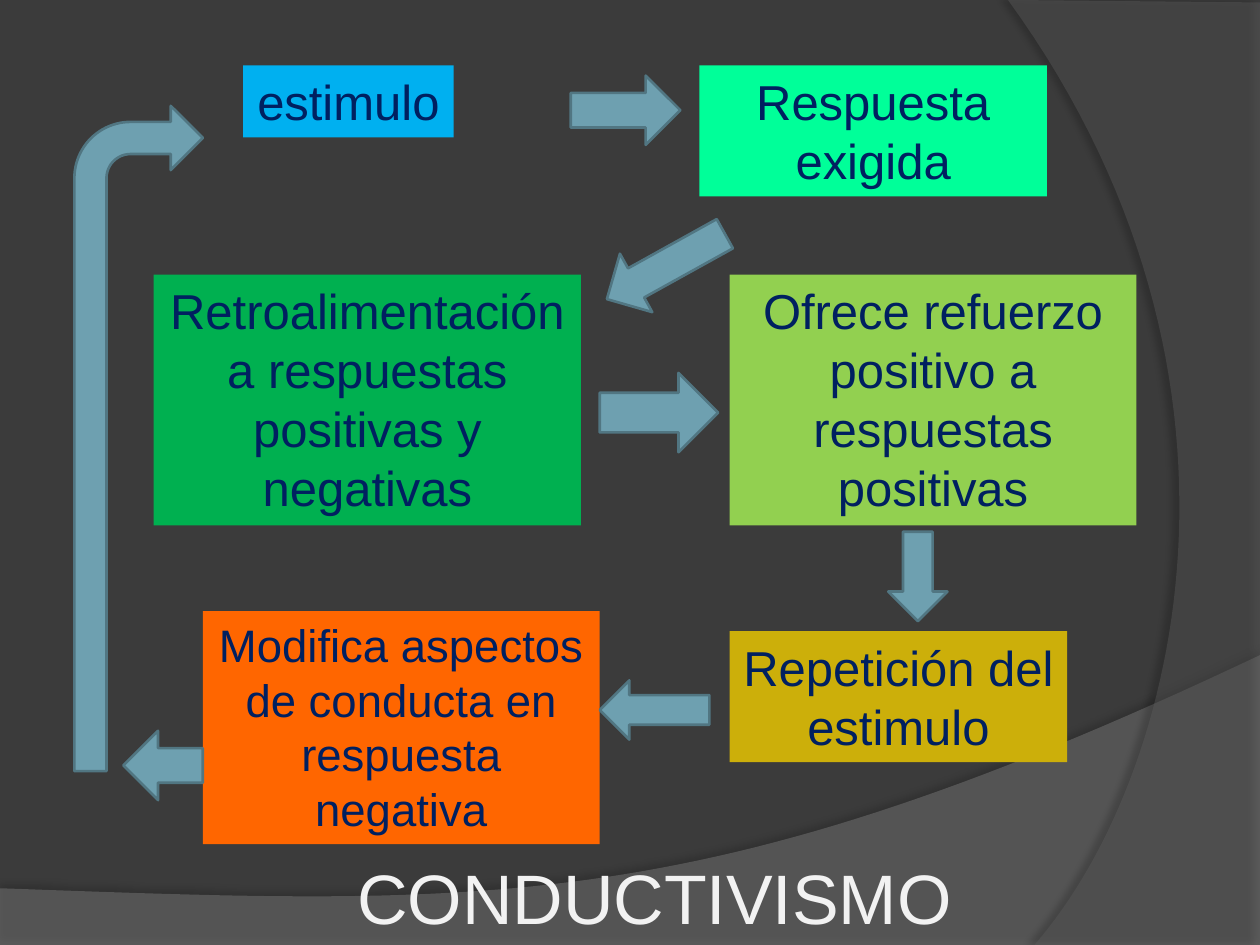
from lxml import etree
from pptx import Presentation
from pptx.dml.color import RGBColor
from pptx.enum.shapes import MSO_SHAPE as Shape
from pptx.enum.text import MSO_ANCHOR, MSO_AUTO_SIZE, PP_ALIGN
from pptx.oxml.ns import qn
from pptx.util import Inches, Pt

FONT = "Arial"
BACKGROUND = RGBColor(0x3B, 0x3B, 0x3B)
FLOOR_GRAY = RGBColor(0x7F, 0x7F, 0x7F)
SIDE_GRAY = RGBColor(0x5E, 0x5E, 0x5E)
NAVY = RGBColor(0x00, 0x20, 0x60)
OFF_WHITE = RGBColor(0xF2, 0xF2, 0xF2)
ARROW_FILL = RGBColor(0x6E, 0xA0, 0xB0)
ARROW_LINE = RGBColor(0x51, 0x76, 0x82)
GOLD = RGBColor(0xCC, 0xAF, 0x0A)
ORANGE = RGBColor(0xFF, 0x66, 0x00)
GREEN = RGBColor(0x00, 0xB0, 0x50)
LIME = RGBColor(0x92, 0xD0, 0x50)
BLUE = RGBColor(0x00, 0xB0, 0xF0)
MINT = RGBColor(0x00, 0xFF, 0x99)

# Steps of the cycle: text, box, fill, text size
STEPS = [
    ("Repetición del estimulo", (5.79, 5.01, 2.68, 1.04), GOLD, 28),
    ("Modifica aspectos de conducta en respuesta negativa",
     (1.61, 4.85, 3.15, 1.85), ORANGE, 26),
    ("Retroalimentación a respuestas positivas y negativas",
     (1.22, 2.18, 3.39, 1.99), GREEN, 28),
    ("Ofrece refuerzo positivo a respuestas positivas",
     (5.79, 2.18, 3.23, 1.99), LIME, 28),
    ("estimulo", (1.93, 0.52, 1.67, 0.57), BLUE, 28),
    ("Respuesta exigida", (5.55, 0.52, 2.76, 1.04), MINT, 28),
]

# Arrows between the steps: preset, box, rotation
ARROWS = [
    (Shape.BENT_ARROW, (0.59, 0.84, 1.02, 5.28), 0),
    (Shape.LEFT_ARROW, (0.98, 5.8, 0.63, 0.55), 0),
    (Shape.RIGHT_ARROW, (4.53, 0.6, 0.87, 0.55), 0),
    (Shape.LEFT_ARROW, (4.75, 1.85, 1.07, 0.53), 331),
    (Shape.RIGHT_ARROW, (4.76, 2.96, 0.94, 0.63), 0),
    (Shape.DOWN_ARROW, (7.05, 4.22, 0.47, 0.71), 0),
    (Shape.LEFT_ARROW, (4.76, 5.4, 0.87, 0.47), 0),
]


def inches(values):
    return [Inches(value) for value in values]


def bezier(start, control_1, control_2, end, steps=60):
    """Return points along a cubic curve, both ends included."""
    points = []
    for step in range(steps + 1):
        t = step / steps
        u = 1 - t
        weights = (u ** 3, 3 * u * u * t, 3 * u * t * t, t ** 3)
        points.append(tuple(
            sum(weight * value for weight, value in zip(weights, axis))
            for axis in zip(start, control_1, control_2, end)))
    return points


def add_alpha(color, percent):
    etree.SubElement(color, qn("a:alpha"), val=str(percent * 1000))


def add_wave(slide, points, color, opacity, shadow):
    """Draw a translucent outline; shadow is opacity, blur, distance, angle."""
    start, *others = [inches(point) for point in points]
    builder = slide.shapes.build_freeform(*start)
    builder.add_line_segments(others, close=True)
    wave = builder.convert_to_shape()
    wave.fill.solid()
    wave.fill.fore_color.rgb = color
    wave.line.fill.background()
    properties = wave._element.spPr
    add_alpha(properties.find(qn("a:solidFill"))[0], opacity)

    shadow_opacity, blur, distance, angle = shadow
    effects = etree.SubElement(properties, qn("a:effectLst"))
    outer = etree.SubElement(
        effects, qn("a:outerShdw"), blurRad=str(Pt(blur)),
        dist=str(Pt(distance)), dir=str(angle * 60000), rotWithShape="0")
    shadow_color = etree.SubElement(outer, qn("a:srgbClr"), val="000000")
    add_alpha(shadow_color, shadow_opacity)


def add_backdrop(slide):
    slide.background.fill.solid()
    slide.background.fill.fore_color.rgb = BACKGROUND
    floor = [(0, 7.5), (10, 7.5)]
    floor += bezier((10, 5.2), (5.59, 7.29), (3.91, 7.19), (0, 7.05))
    add_wave(slide, floor, FLOOR_GRAY, 45, (35, 4, 3.5, 270))
    side = [(10, 0.02), (10, 7.5)]
    side += bezier((8.21, 7.5), (9.35, 6.19), (10.18, 3), (8, 0))
    add_wave(slide, side, SIDE_GRAY, 40, (45, 4, 4, 180))


def write(shape, text, size, color):
    frame = shape.text_frame
    frame.text = text
    frame.word_wrap = True
    frame.auto_size = MSO_AUTO_SIZE.SHAPE_TO_FIT_TEXT
    frame.vertical_anchor = MSO_ANCHOR.TOP
    paragraph = frame.paragraphs[0]
    paragraph.alignment = PP_ALIGN.CENTER
    font = paragraph.runs[0].font
    font.name, font.size = FONT, Pt(size)
    font.color.rgb = color


def add_step(slide, text, box, fill, size):
    step = slide.shapes.add_shape(Shape.RECTANGLE, *inches(box))
    step.shadow.inherit = False
    step.fill.solid()
    step.fill.fore_color.rgb = fill
    step.line.fill.background()
    write(step, text, size, NAVY)
    step.text_frame.word_wrap = " " in text


def add_arrow(slide, preset, box, rotation):
    arrow = slide.shapes.add_shape(preset, *inches(box))
    arrow.shadow.inherit = False
    arrow.rotation = rotation
    arrow.fill.solid()
    arrow.fill.fore_color.rgb = ARROW_FILL
    arrow.line.color.rgb = ARROW_LINE
    arrow.line.width = Pt(1.5)


def place_title(slide, text, box):
    title = slide.shapes.title
    title.left, title.top, title.width, title.height = inches(box)
    write(title, text, 40, OFF_WHITE)
    slide.shapes._spTree.append(title._element)  # in front of the backdrop


def main():
    deck = Presentation()
    deck.slide_width, deck.slide_height = Inches(10), Inches(7.5)
    slide = deck.slides.add_slide(deck.slide_layouts[5])
    add_backdrop(slide)
    for step in STEPS:
        add_step(slide, *step)
    for arrow in ARROWS:
        add_arrow(slide, *arrow)
    place_title(slide, "CONDUCTIVISMO", (2.71, 6.73, 4.97, 0.77))
    deck.save("out.pptx")


if __name__ == "__main__":
    main()
